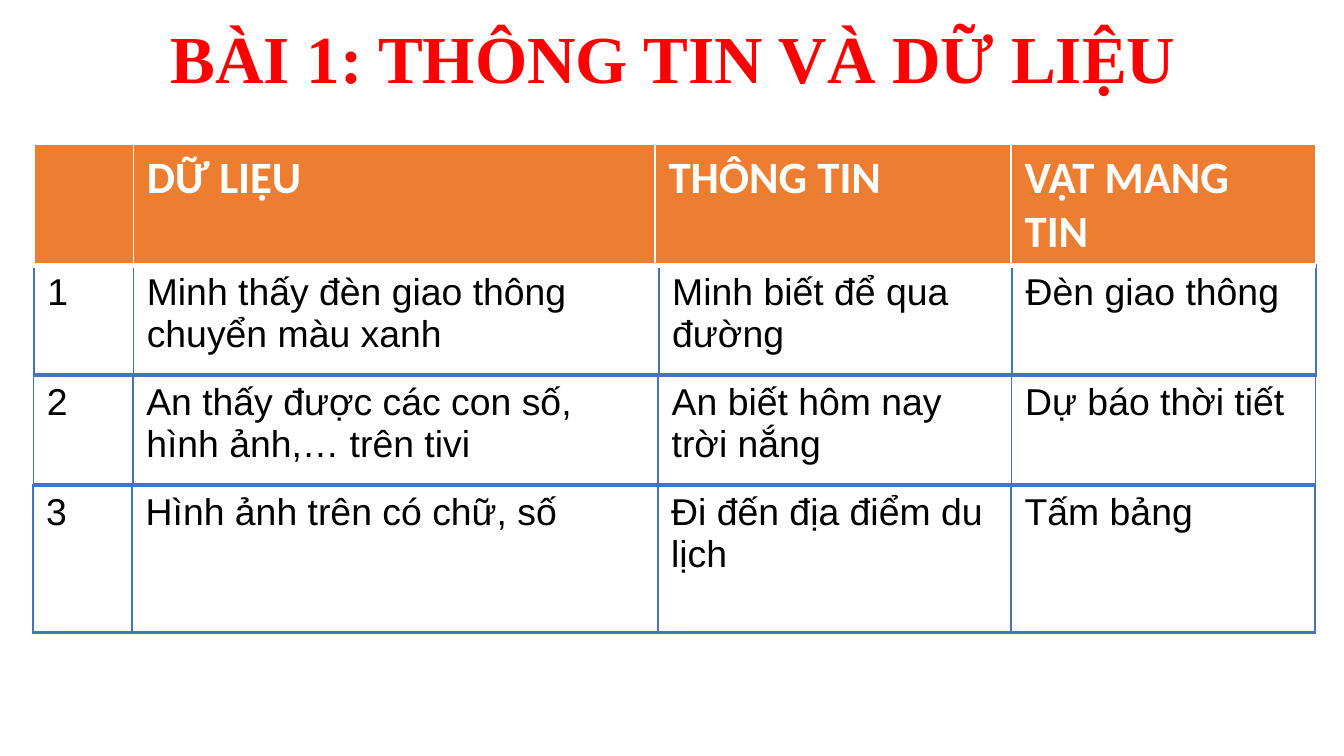
import lxml.etree
import pptx
import pptx.dml.color
import pptx.enum.text
import pptx.oxml.ns
import pptx.util

Cm = pptx.util.Cm
Pt = pptx.util.Pt


def color(value):
    return pptx.dml.color.RGBColor.from_string(value)


class LessonSlide:
    RED = "FF0000"
    ORANGE = "ED7D31"
    BLUE = "4472C4"
    WHITE = "FFFFFF"
    BLACK = "000000"

    def __init__(self, presentation):
        self.slide = presentation.slides.add_slide(presentation.slide_layouts[6])

    def style_font(self, paragraph, name, size, value, bold):
        paragraph.font.name = name
        paragraph.font.size = Pt(size)
        paragraph.font.bold = bold
        paragraph.font.color.rgb = color(value)

    def add_title(self, text, left, top, width, height):
        shape = self.slide.shapes.add_textbox(Cm(left), Cm(top), Cm(width), Cm(height))
        frame = shape.text_frame
        frame.word_wrap = True
        frame.auto_size = pptx.enum.text.MSO_AUTO_SIZE.SHAPE_TO_FIT_TEXT
        frame.margin_left = frame.margin_right = 0
        frame.margin_top = frame.margin_bottom = 0
        paragraph = frame.paragraphs[0]
        paragraph.text = text
        paragraph.alignment = pptx.enum.text.PP_ALIGN.CENTER
        self.style_font(paragraph, "Times New Roman", 36, self.RED, True)

    def set_borders(self, cell, value, bottom_width):
        qn = pptx.oxml.ns.qn
        properties = cell._tc.get_or_add_tcPr()
        for index, side in enumerate("LRTB"):
            width = bottom_width if side == "B" else 1
            line = lxml.etree.Element(qn(f"a:ln{side}"), w=str(Pt(width)))
            fill = lxml.etree.SubElement(line, qn("a:solidFill"))
            lxml.etree.SubElement(fill, qn("a:srgbClr"), val=value)
            properties.insert(index, line)

    def add_row_table(self, texts, left, top, height, widths, header=False):
        shape = self.slide.shapes.add_table(
            1, len(texts), Cm(left), Cm(top), Cm(sum(widths)), Cm(height))
        table = shape.table
        table.first_row = header
        table.horz_banding = False
        for column, width in zip(table.columns, widths):
            column.width = Cm(width)
        for cell, text in zip(table.rows[0].cells, texts):
            paragraph = cell.text_frame.paragraphs[0]
            paragraph.text = text
            if header:
                self.style_font(paragraph, "Calibri", 24, self.WHITE, True)
                cell.fill.solid()
                cell.fill.fore_color.rgb = color(self.ORANGE)
                self.set_borders(cell, self.WHITE, 3)
            else:
                self.style_font(paragraph, "Arial", 20, self.BLACK, False)
                cell.fill.background()
                self.set_borders(cell, self.BLUE, 2)


def main():
    presentation = pptx.Presentation()
    presentation.slide_width = Cm(25.4)
    presentation.slide_height = Cm(14.29)
    lesson = LessonSlide(presentation)
    lesson.add_title("BÀI 1: THÔNG TIN VÀ DỮ LIỆU", 1.37, 0.3, 22.71, 1.55)

    header_widths = [1.88, 9.86, 6.73, 5.75]
    body_widths = [1.88, 9.93, 6.68, 5.74]
    first_row = ["1", "Minh thấy đèn giao thông chuyển màu xanh",
                 "Minh biết để qua đường", "Đèn giao thông"]
    header_row = ["", "DỮ LIỆU", "THÔNG TIN", "VẬT MANG TIN"]
    second_row = ["2", "An thấy được các con số, hình ảnh,… trên tivi",
                  "An biết hôm nay trời nắng", "Dự báo thời tiết"]
    third_row = ["3", "Hình ảnh trên có chữ, số",
                 "Đi đến địa điểm du lịch", "Tấm bảng"]

    lesson.add_row_table(first_row, 0.64, 5.01, 2.08, body_widths)
    lesson.add_row_table(header_row, 0.64, 2.72, 2.29, header_widths, header=True)
    lesson.add_row_table(second_row, 0.63, 7.09, 2.08, body_widths)
    lesson.add_row_table(third_row, 0.62, 9.17, 2.79, body_widths)
    presentation.save("out.pptx")


if __name__ == "__main__":
    main()
